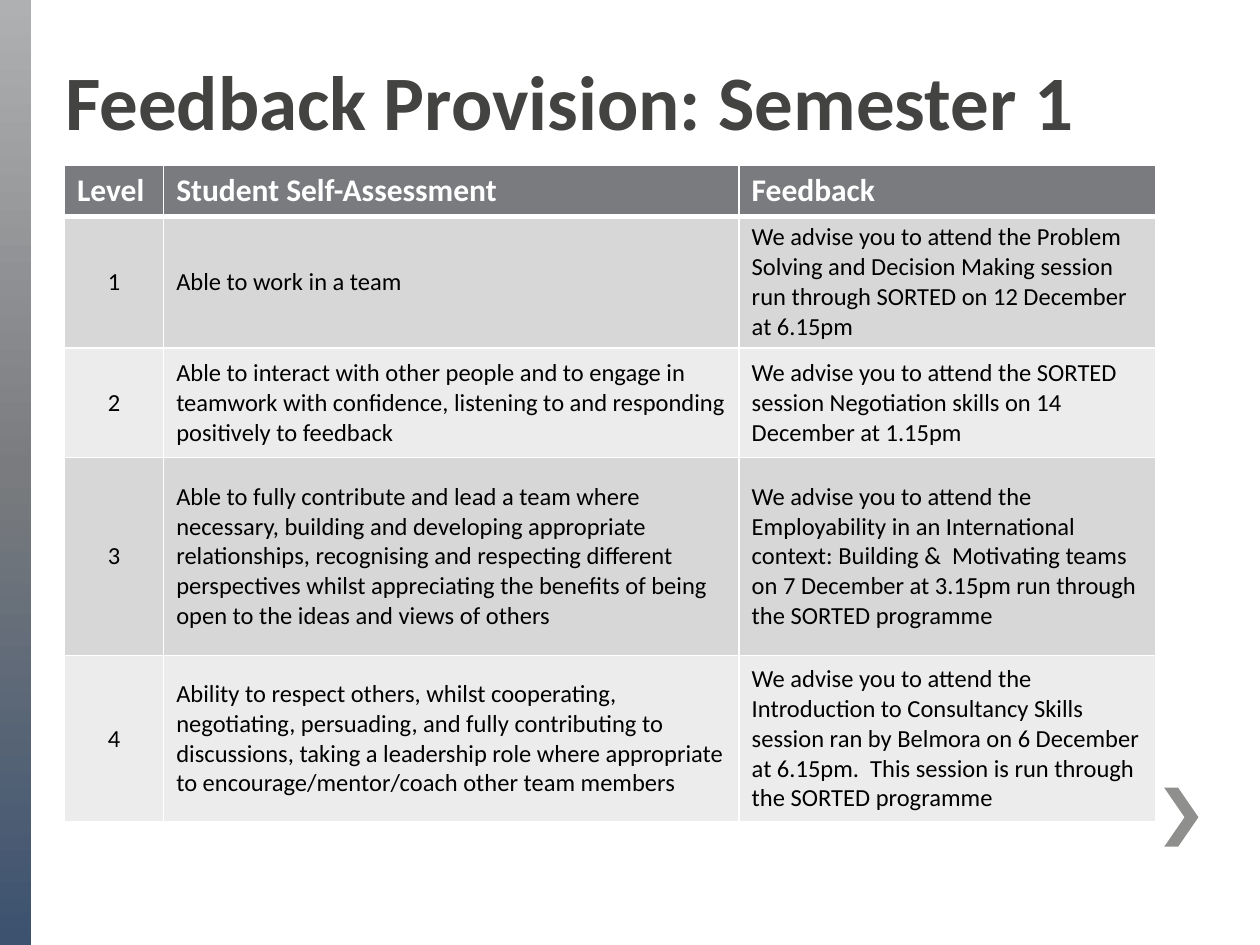
from copy import deepcopy

from lxml import etree
from pptx import Presentation
from pptx import util as u
from pptx.dml.color import RGBColor
from pptx.enum import shapes, text
from pptx.oxml import ns

FONT = "Calibri"
WHITE = RGBColor(0xFF, 0xFF, 0xFF)
BLACK = RGBColor(0x00, 0x00, 0x00)
TITLE_GREY = RGBColor(0x43, 0x43, 0x42)
HEADER_GREY = RGBColor(0x79, 0x7B, 0x7E)
ODD_ROW_GREY = RGBColor(0xD7, 0xD7, 0xD8)
EVEN_ROW_GREY = RGBColor(0xEC, 0xEC, 0xEC)
CHEVRON_GREY = RGBColor(0x8F, 0x8F, 0x8D)
BAR_TOP_GREY = RGBColor(0xAF, 0xB0, 0xB2)
BAR_BOTTOM_BLUE = RGBColor(0x3C, 0x52, 0x6F)

BAR_STOPS = [(0, BAR_TOP_GREY), (0.5, HEADER_GREY), (1, BAR_BOTTOM_BLUE)]

# Table sizes in centimetres
COLUMN_WIDTHS = [2, 11.6, 8.4]
ROW_HEIGHTS = [1, 2.64, 2.2, 4, 3.35]

HEADINGS = ["Level", "Student Self-Assessment", "Feedback"]
# One (self-assessment, feedback) pair for each level, from level 1 up
LEVELS = [
    ("Able to work in a team",
     "We advise you to attend the Problem Solving and Decision Making session "
     "run through SORTED on 12 December at 6.15pm"),
    ("Able to interact with other people and to engage in teamwork with "
     "confidence, listening to and responding positively to feedback",
     "We advise you to attend the SORTED session Negotiation skills on "
     "14 December at 1.15pm"),
    ("Able to fully contribute and lead a team where necessary, building and "
     "developing appropriate relationships, recognising and respecting "
     "different perspectives whilst appreciating the benefits of being open "
     "to the ideas and views of others",
     "We advise you to attend the Employability in an International context: "
     "Building &  Motivating teams on 7 December at 3.15pm run through the "
     "SORTED programme"),
    ("Ability to respect others, whilst cooperating, negotiating, persuading, "
     "and fully contributing to discussions, taking a leadership role where "
     "appropriate to encourage/mentor/coach other team members",
     "We advise you to attend the Introduction to Consultancy Skills session "
     "ran by Belmora on 6 December at 6.15pm.  This session is run through "
     "the SORTED programme"),
]


def write_text(frame, words, size=14, color=BLACK, bold=False,
               align=text.PP_ALIGN.LEFT):
    paragraph = frame.paragraphs[0]
    paragraph.alignment = align
    run = paragraph.add_run()
    run.text = words
    run.font.name = FONT
    run.font.size = u.Pt(size)
    run.font.bold = bold
    run.font.color.rgb = color


def paint(filled, color):
    """Give a shape or a table cell a plain fill."""
    filled.fill.solid()
    filled.fill.fore_color.rgb = color


def add_gradient_bar(slide, height):
    bar = slide.shapes.add_shape(
        shapes.MSO_SHAPE.RECTANGLE, 0, 0, u.Cm(0.63), height)
    bar.shadow.inherit = False
    bar.line.fill.background()
    bar.fill.gradient()
    bar.fill.gradient_angle = 270
    # A new gradient has two stops; the third is a copy of the first.
    stop_list = bar._element.spPr.find(".//" + ns.qn("a:gsLst"))
    stop_list.append(deepcopy(stop_list[0]))
    for stop, (position, color) in zip(bar.fill.gradient_stops, BAR_STOPS):
        stop.position = position
        stop.color.rgb = color


def add_chevron(slide, left, top, width, height, thickness):
    """Draw a right-pointing chevron; lengths are in centimetres."""
    right, middle, bottom = left + width, top + height / 2, top + height
    corners = [
        (left, top),
        (left + thickness, top),
        (right, middle),
        (left + thickness, bottom),
        (left, bottom),
        (right - thickness, middle),
    ]
    start, *others = [(u.Cm(x), u.Cm(y)) for x, y in corners]
    builder = slide.shapes.build_freeform(*start, scale=1.0)
    builder.add_line_segments(others, close=True)
    chevron = builder.convert_to_shape()
    chevron.shadow.inherit = False
    chevron.line.fill.background()
    paint(chevron, CHEVRON_GREY)


def add_title(slide, words):
    box = slide.shapes.add_textbox(
        u.Cm(0.06), u.Cm(0.95), u.Cm(22.86), u.Cm(3.18))
    box.text_frame.word_wrap = True
    write_text(box.text_frame, words, size=44, color=TITLE_GREY, bold=True,
               align=text.PP_ALIGN.CENTER)


def set_borders(cell, bottom_width):
    """Draw white borders, 1 point wide except at the bottom."""
    properties = cell._tc.get_or_add_tcPr()
    widths = {"a:lnL": 1, "a:lnR": 1, "a:lnT": 1, "a:lnB": bottom_width}
    for tag, width in widths.items():
        line = etree.SubElement(properties, ns.qn(tag), w=str(u.Pt(width)))
        fill = etree.SubElement(line, ns.qn("a:solidFill"))
        etree.SubElement(fill, ns.qn("a:srgbClr"), val=str(WHITE))


def fill_cell(cell, words, background, bottom_width=1,
              anchor=text.MSO_ANCHOR.MIDDLE, **text_format):
    set_borders(cell, bottom_width)
    paint(cell, background)
    cell.vertical_anchor = anchor
    write_text(cell.text_frame, words, **text_format)


def fill_header_row(table):
    for column, heading in enumerate(HEADINGS):
        fill_cell(table.cell(0, column), heading, HEADER_GREY, bottom_width=3,
                  anchor=text.MSO_ANCHOR.TOP, size=18, color=WHITE, bold=True)


def fill_level_rows(table):
    for level, descriptions in enumerate(LEVELS, start=1):
        background = ODD_ROW_GREY if level % 2 else EVEN_ROW_GREY
        fill_cell(table.cell(level, 0), str(level), background,
                  align=text.PP_ALIGN.CENTER)
        for column, description in enumerate(descriptions, start=1):
            fill_cell(table.cell(level, column), description, background)


def add_feedback_table(slide):
    table = slide.shapes.add_table(
        len(ROW_HEIGHTS), len(COLUMN_WIDTHS), u.Cm(1.3), u.Cm(3.33),
        u.Cm(sum(COLUMN_WIDTHS)), u.Cm(sum(ROW_HEIGHTS))).table
    for column, width in zip(table.columns, COLUMN_WIDTHS):
        column.width = u.Cm(width)
    for row, height in zip(table.rows, ROW_HEIGHTS):
        row.height = u.Cm(height)
    fill_header_row(table)
    fill_level_rows(table)


def main():
    presentation = Presentation()
    presentation.slide_width = u.Cm(25.4)
    presentation.slide_height = u.Cm(19.05)
    slide = presentation.slides.add_slide(presentation.slide_layouts[6])
    add_gradient_bar(slide, presentation.slide_height)
    add_chevron(slide, left=23.47, top=15.88, width=0.69, height=1.19,
                thickness=0.28)
    add_feedback_table(slide)
    add_title(slide, "Feedback Provision: Semester 1")
    presentation.save("out.pptx")


if __name__ == "__main__":
    main()
